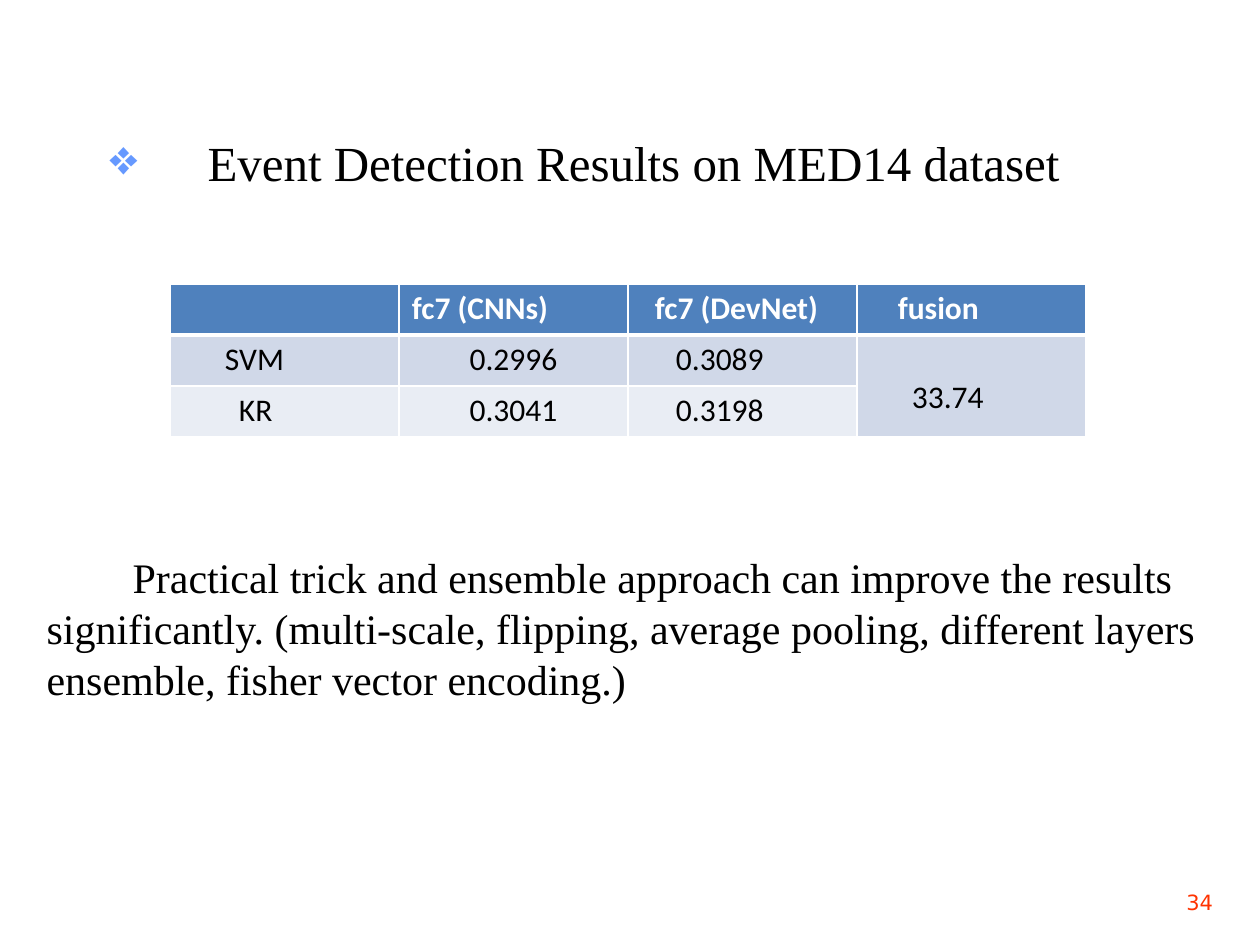
from dataclasses import dataclass

from lxml.etree import SubElement
from pptx import Presentation
from pptx.dml.color import RGBColor
from pptx.enum.text import MSO_ANCHOR, MSO_AUTO_SIZE, PP_ALIGN
from pptx.oxml.ns import qn
from pptx.util import Emu, Pt

SCALE = 914400 // 126  # EMU per px


@dataclass(frozen=True)
class Theme:
    ink: str = "000000"
    white: str = "FFFFFF"
    mark: str = "6699FF"
    page: str = "FF3300"
    head: str = "4F81BD"
    bands: tuple = ("D0D8E8", "E9EDF4")
    serif: str = "Times New Roman"
    sans: str = "Calibri"
    mono: str = "DejaVu Sans"
    title: int = 28
    body: int = 24
    cell: int = 18
    small: int = 12


@dataclass(frozen=True)
class Box:
    left: int
    top: int
    width: int
    height: int


@dataclass(frozen=True)
class Entry:
    text: str
    inset: int = 13  # left margin in px; None centres the text
    drop: int = 6    # top margin in px


THEME = Theme()
TITLE = Box(34, 126, 1191, 72)
BODY = Box(34, 545, 1191, 170)
PAGE = Box(1174, 880, 86, 44)
GRID = Box(170, 284, 916, 153)
ROWS = [
    [Entry(""), Entry("fc7 (CNNs)"), Entry("fc7 (DevNet)", 27), Entry("fusion", 41)],
    [Entry("SVM", 55), Entry("0.2996", None), Entry("0.3089", 48), Entry("33.74", 55, 44)],
    [Entry("KR", 69), Entry("0.3041", None), Entry("0.3198", 48)],
]


def px(size: int) -> Emu:
    return Emu(size * SCALE)


def place(shape, box: Box) -> None:
    shape.left, shape.top = px(box.left), px(box.top)
    shape.width, shape.height = px(box.width), px(box.height)


def style(para, face: str, size: int, color: str, bold: bool = False) -> None:
    for run in para.runs:
        font = run.font
        font.name, font.size, font.bold = face, Pt(size), bold
        font.color.rgb = RGBColor.from_string(color)


def write(shape, box: Box, text: str, size: int, pitch: int):
    """Fill a placeholder with one left-aligned serif paragraph."""
    place(shape, box)
    frame = shape.text_frame
    frame.text = text
    frame.word_wrap = True
    frame.auto_size = MSO_AUTO_SIZE.NONE
    frame.vertical_anchor = MSO_ANCHOR.TOP
    para = frame.paragraphs[0]
    para.alignment = PP_ALIGN.LEFT
    para.space_before = Pt(0)
    para.line_spacing = Pt(pitch)
    style(para, THEME.serif, size, THEME.ink)
    return para


def indent(para, left: int, first: int, mark: str = "") -> None:
    props = para._p.get_or_add_pPr()
    props.set("marL", str(px(left)))
    props.set("indent", str(px(first)))
    if mark:
        tint = SubElement(props, qn("a:buClr"))
        SubElement(tint, qn("a:srgbClr"), val=THEME.mark)
        SubElement(props, qn("a:buChar"), char=mark)
    else:
        SubElement(props, qn("a:buNone"))


def edge(cell, base: int) -> None:
    """Draw white cell borders, with the bottom one of the given weight."""
    props = cell._tc.get_or_add_tcPr()
    for spot, side in enumerate("LRTB"):
        width = Pt(base if side == "B" else 1)
        line = SubElement(props, qn(f"a:ln{side}"), w=str(width))
        fill = SubElement(line, qn("a:solidFill"))
        SubElement(fill, qn("a:srgbClr"), val=THEME.white)
        props.insert(spot, line)


def fill_cell(cell, entry: Entry, back: str, head: bool) -> None:
    cell.text = entry.text
    cell.margin_top = px(entry.drop)
    para = cell.text_frame.paragraphs[0]
    if entry.inset is None:
        para.alignment = PP_ALIGN.CENTER
    else:
        cell.margin_left = px(entry.inset)
    style(para, THEME.sans, THEME.cell, THEME.white if head else THEME.ink, head)
    cell.fill.solid()
    cell.fill.fore_color.rgb = RGBColor.from_string(back)


def draw_grid(slide, box: Box, rows: list[list[Entry]]) -> None:
    count, wide = len(rows), len(rows[0])
    table = slide.shapes.add_table(
        count, wide, px(box.left), px(box.top), px(box.width), px(box.height)
    ).table
    table.cell(1, wide - 1).merge(table.cell(count - 1, wide - 1))
    for y, row in enumerate(rows):
        back = THEME.bands[(y - 1) % 2] if y else THEME.head
        for x, entry in enumerate(row):
            fill_cell(table.cell(y, x), entry, back, y == 0)
        for x in range(wide):
            edge(table.cell(y, x), 1 if y else 3)


def main() -> None:
    deck = Presentation()
    deck.slide_width, deck.slide_height = px(1260), px(945)
    slide = deck.slides.add_slide(deck.slide_layouts[1])

    # Heading with its diamond bullet
    head = write(slide.shapes.title, TITLE,
                 "Event Detection Results on MED14 dataset", THEME.title, 34)
    indent(head, 161, -98, "❖")

    # Remark below the table
    note = write(slide.placeholders[1], BODY,
                 "Practical trick and ensemble approach can improve the results "
                 "significantly. (multi-scale, flipping, average pooling, different "
                 "layers ensemble, fisher vector encoding.)", THEME.body, 29)
    indent(note, 0, 86)

    # Results table
    draw_grid(slide, GRID, ROWS)

    # Page number
    page = slide.shapes.add_textbox(0, 0, 0, 0)
    place(page, PAGE)
    page.text_frame.text = "34"
    page.text_frame.word_wrap = True
    page.text_frame.vertical_anchor = MSO_ANCHOR.MIDDLE
    style(page.text_frame.paragraphs[0], THEME.mono, THEME.small, THEME.page)

    deck.save("out.pptx")


if __name__ == "__main__":
    main()
